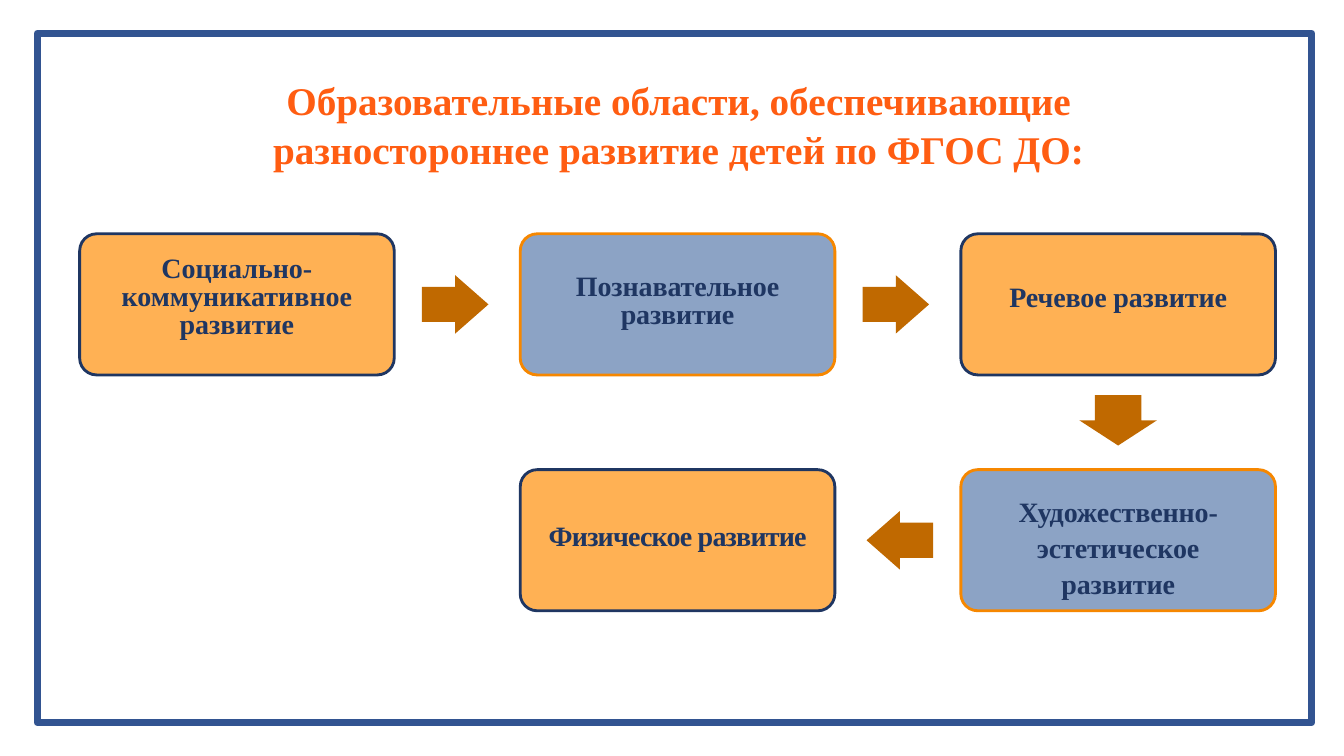
from pptx import Presentation
from pptx.dml.color import RGBColor
from pptx.enum.shapes import MSO_SHAPE
from pptx.enum.text import MSO_ANCHOR, PP_ALIGN
from pptx.util import Inches, Pt

RECTANGLE = MSO_SHAPE.RECTANGLE
ROUNDED = MSO_SHAPE.ROUNDED_RECTANGLE
RIGHT = MSO_SHAPE.RIGHT_ARROW
DOWN = MSO_SHAPE.DOWN_ARROW
LEFT = MSO_SHAPE.LEFT_ARROW
CENTER = PP_ALIGN.CENTER
MIDDLE = MSO_ANCHOR.MIDDLE

WHITE = RGBColor(0xFF, 0xFF, 0xFF)
FRAME_BLUE = RGBColor(0x32, 0x54, 0x91)
NAVY = RGBColor(0x1F, 0x36, 0x62)
LIGHT_ORANGE = RGBColor(0xFF, 0xB1, 0x54)
ORANGE = RGBColor(0xF6, 0x87, 0x00)
GREY_BLUE = RGBColor(0x8C, 0xA3, 0xC5)
BROWN = RGBColor(0xC0, 0x69, 0x00)
TITLE_ORANGE = RGBColor(0xFF, 0x5D, 0x12)

FONT = "Times New Roman"
ORANGE_CARD = (LIGHT_ORANGE, NAVY)
BLUE_CARD = (GREY_BLUE, ORANGE)

# Grid of cards, in inches
CARD_WIDTH, CARD_HEIGHT = 3.12, 1.4
COLUMN_STEP, ROW_STEP = 4.37, 2.34
ARROW_SETBACK = 0.02

# column, row, colours, lines, line spacing, vertical text shift, letter spacing
CARDS = [
    (0, 0, ORANGE_CARD, ["Социально-коммуникативное развитие"], Pt(20.1), -0.06, 0),
    (1, 0, BLUE_CARD, ["Познавательное", "развитие"], Pt(20.1), -0.02, -0.1),
    (2, 0, ORANGE_CARD, ["Речевое развитие"], Pt(18.6), -0.04, -0.1),
    (2, 1, BLUE_CARD, ["Художественно-эстетическое", "развитие"], 1.07, 0.06, -0.1),
    (1, 1, ORANGE_CARD, ["Физическое развитие"], 0.86, -0.02, -0.6),
]

# shape, direction, width, height, shaft share, head length
ARROWS = [
    (RIGHT, (1, 0), 0.66, 0.58, 0.6, 0.33),
    (RIGHT, (1, 0), 0.66, 0.58, 0.6, 0.33),
    (DOWN, (0, 1), 0.77, 0.5, 0.6, 0.25),
    (LEFT, (-1, 0), 0.66, 0.58, 0.6, 0.33),
]


def add_box(slide, kind, left, top, width, height, fill, line=None, line_width=0):
    shape = slide.shapes.add_shape(
        kind, Inches(left), Inches(top), Inches(width), Inches(height))
    shape.shadow.inherit = False
    shape.fill.solid()
    shape.fill.fore_color.rgb = fill
    if line is None:
        shape.line.fill.background()
    else:
        shape.line.color.rgb = line
        shape.line.width = Pt(line_width)
    return shape


def write_lines(text_frame, lines, size, color, line_spacing, letter_spacing=0):
    text_frame.word_wrap = True
    text_frame.text = "\n".join(lines)
    for paragraph in text_frame.paragraphs:
        paragraph.alignment = CENTER
        paragraph.line_spacing = line_spacing
        for run in paragraph.runs:
            run.font.name = FONT
            run.font.size = Pt(size)
            run.font.bold = True
            run.font.color.rgb = color
            if letter_spacing:
                run._r.get_or_add_rPr().set("spc", str(round(letter_spacing * 100)))


def add_title(slide, left, top, width, height):
    box = slide.shapes.add_textbox(
        Inches(left), Inches(top), Inches(width), Inches(height))
    write_lines(box.text_frame,
                ["Образовательные области, обеспечивающие",
                 "разностороннее развитие детей по ФГОС ДО:"],
                28, TITLE_ORANGE, 1.05)


def add_card(slide, left, top, colors, lines, line_spacing, shift, letter_spacing):
    fill, line = colors
    card = add_box(slide, ROUNDED, left, top, CARD_WIDTH, CARD_HEIGHT, fill, line, 2.04)
    card.adjustments[0] = 0.12
    text_frame = card.text_frame
    text_frame.vertical_anchor = MIDDLE
    text_frame.margin_left = text_frame.margin_right = 0
    # An inset on one side moves centred text by half of it
    text_frame.margin_top = Inches(max(2 * shift, 0))
    text_frame.margin_bottom = Inches(max(-2 * shift, 0))
    write_lines(text_frame, lines, 20, NAVY, line_spacing, letter_spacing)


def add_arrow(slide, center_x, center_y, kind, direction, width, height, shaft, head):
    center_x -= direction[0] * ARROW_SETBACK
    center_y -= direction[1] * ARROW_SETBACK
    arrow = add_box(slide, kind, center_x - width / 2, center_y - height / 2,
                    width, height, BROWN)
    arrow.adjustments[0] = shaft
    arrow.adjustments[1] = head / min(width, height)


def add_flow(slide, left, top):
    corners = []
    for column, row, *content in CARDS:
        corner = (left + column * COLUMN_STEP, top + row * ROW_STEP)
        add_card(slide, *corner, *content)
        corners.append(corner)
    # Each arrow sits midway between neighbouring cards
    for start, end, arrow in zip(corners, corners[1:], ARROWS):
        add_arrow(slide, (start[0] + end[0] + CARD_WIDTH) / 2,
                  (start[1] + end[1] + CARD_HEIGHT) / 2, *arrow)


def main():
    presentation = Presentation()
    presentation.slide_width = Inches(13.33)
    presentation.slide_height = Inches(7.5)
    slide = presentation.slides.add_slide(presentation.slide_layouts[6])

    # Frame, title and chain of areas
    add_box(slide, RECTANGLE, 0.37, 0.33, 12.64, 6.84, WHITE, FRAME_BLUE, 5)
    add_title(slide, 2.51, 0.68, 8.44, 1.04)
    add_flow(slide, 0.79, 2.32)

    presentation.save("out.pptx")


if __name__ == "__main__":
    main()
